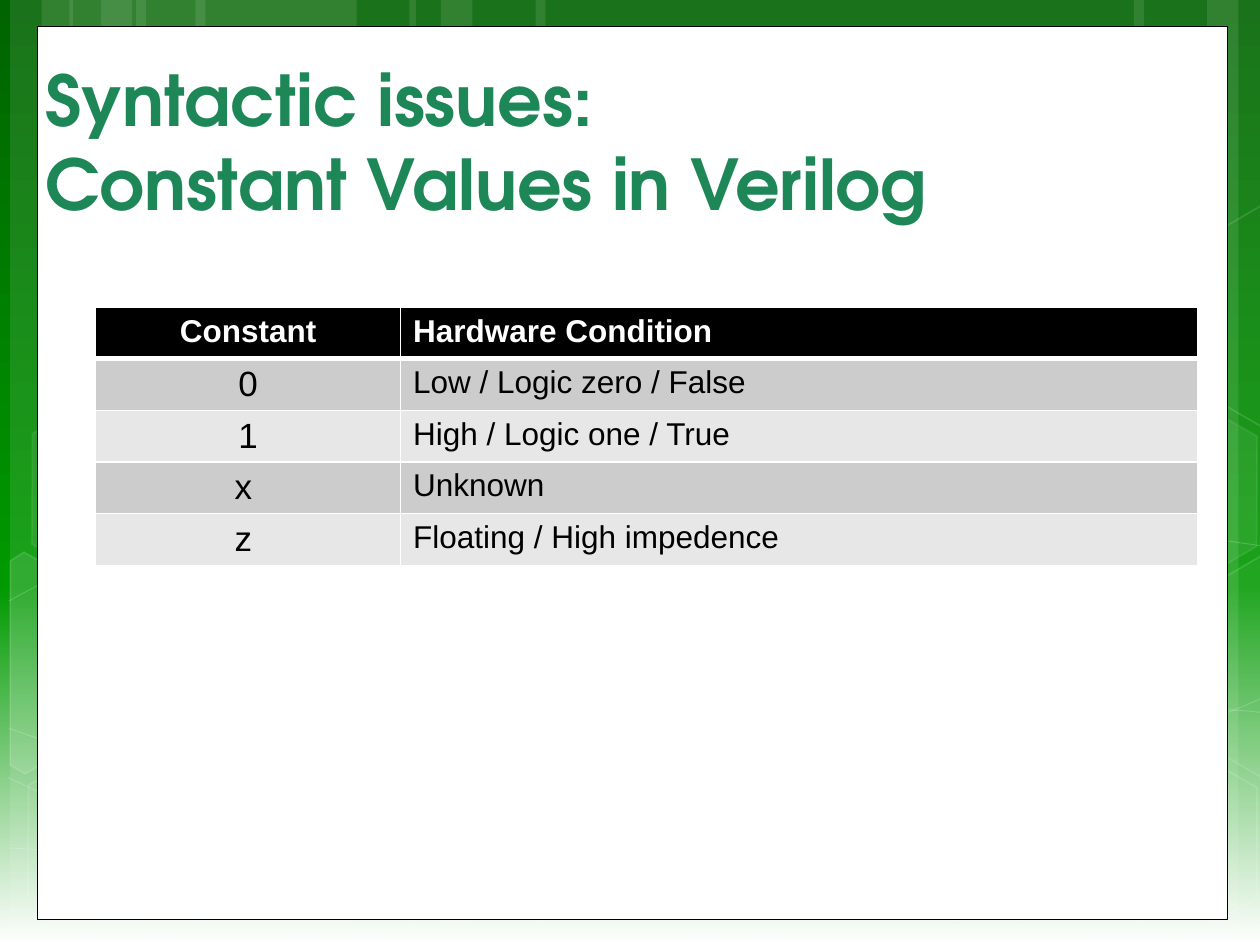
from copy import deepcopy
from math import cos, radians, sin

from lxml.etree import SubElement
from pptx import Presentation
from pptx.dml.color import RGBColor
from pptx.enum.shapes import MSO_SHAPE as SHAPE
from pptx.enum.text import MSO_ANCHOR as ANCHOR, MSO_AUTO_SIZE as AUTO, PP_ALIGN as ALIGN
from pptx.oxml.ns import qn
from pptx.util import Inches, Pt

WHITE = RGBColor(0xFF, 0xFF, 0xFF)
BLACK = RGBColor(0, 0, 0)
DARK_GREEN = RGBColor(0, 0x64, 0)
GREEN = RGBColor(0, 0x99, 0)
TITLE_GREEN = RGBColor(0x1D, 0x87, 0x57)
GRAY = RGBColor(0xCC, 0xCC, 0xCC)
LIGHT_GRAY = RGBColor(0xE7, 0xE7, 0xE7)

TILT = 30  # degrees, for every hexagon

# Left edge and width of each full-height band
BANDS = [(1.08, 1.75), (0.08, 0.5), (0.33, 0.83), (1.55, 1.75), (0.55, 0.5), (0.8, 0.83),
         (7.33, 1.75), (9.58, 0.5), (9, 0.83), (4.25, 3.08), (3.25, 0.5), (3.5, 0.83)]

# Start point, then groups of three points, one group for each Bezier segment
CURVES = [
    [(0.07, 6.73), (0.61, 6.76), (1.15, 6.79), (1.9, 6.78), (2.65, 6.77), (3.58, 6.75),
     (4.58, 6.65), (5.58, 6.55), (7, 6.36), (7.92, 6.17), (8.83, 5.98), (9.77, 5.68),
     (10.07, 5.51)],
    [(0.07, 4.77), (0.36, 4.61), (0.65, 4.46), (1.21, 4.31), (1.78, 4.16), (2.59, 3.94),
     (3.47, 3.87), (4.36, 3.8), (5.44, 3.79), (6.54, 3.87), (7.64, 3.95), (9.47, 4.26),
     (10.07, 4.34)],
    [(0.06, 6.17), (1.27, 6.72), (2.47, 7.27), (3.34, 7.49)],
    [(0.07, 5.78), (0.38, 5.89), (0.7, 6), (1.28, 6.16), (1.86, 6.31), (2.73, 6.56),
     (3.57, 6.73), (4.4, 6.9), (5.45, 7.08), (6.28, 7.18), (7.11, 7.29), (8, 7.33),
     (8.53, 7.36), (9.05, 7.4), (9.19, 7.38), (9.45, 7.38), (9.71, 7.37), (9.89, 7.35),
     (10.07, 7.34)],
    [(2.42, 7.49), (2.6, 7.29), (2.78, 7.09), (3.02, 6.91), (3.26, 6.73), (3.6, 6.53),
     (3.88, 6.39), (4.16, 6.25), (4.33, 6.19), (4.7, 6.09), (5.06, 5.99), (5.73, 5.85),
     (6.08, 5.78), (6.44, 5.71), (6.49, 5.71), (6.8, 5.69), (7.11, 5.66), (7.6, 5.63),
     (7.94, 5.62), (8.29, 5.61), (8.86, 5.62), (8.86, 5.62), (9.08, 5.62), (9.31, 5.62),
     (9.53, 5.62), (9.71, 5.63), (9.88, 5.64), (9.97, 5.65), (10.06, 5.66), (10.03, 5.65),
     (10.06, 5.66)],
]

# Left, top, fill opacity and line opacity in percent
HEXAGONS = [(4.97, 5.89, 6, 12), (0.11, 5.91, 0, 12), (0.14, 3.12, 7, 8),
            (1.74, 5.92, 0, 12), (8.34, 5.93, 0, 12), (8.34, 3.14, 7, 8)]

# Hexagons cut off by the slide edge: centre, corners as they stand tilted, fill opacity
CUT_HEXAGONS = [
    ((0.36, 5.35), [(0.08, 4.45), (0.19, 4.38), (0.96, 4.82), (0.95, 5.7), (0.2, 6.14),
                    (0.08, 6.07)], 10),
    ((9.85, 5.2), [(9.26, 4.85), (10.01, 4.41), (10.09, 4.46), (10.09, 6.13), (10.02, 6.17),
                   (9.26, 5.73)], 4),
    ((9.85, 2.41), [(9.26, 2.07), (10.01, 1.63), (10.1, 1.68), (10.09, 3.35), (10.02, 3.39),
                    (9.26, 2.95)], 0),
]

ROWS = [("Constant", "Hardware Condition"), ("0", "Low / Logic zero / False"),
        ("1", "High / Logic one / True"), ("x ", "Unknown"),
        ("z ", "Floating / High impedence")]


def untilt(point, centre):
    """Turn a point back by TILT, so that the shape's rotation restores it."""
    dx, dy = point[0] - centre[0], point[1] - centre[1]
    c, s = cos(radians(TILT)), sin(radians(TILT))
    return centre[0] + dx * c + dy * s, centre[1] - dx * s + dy * c


class SlideBuilder:
    title_font = dict(name="TeX Gyre Adventor", size=Pt(40), bold=True)
    table_font = "Arial"

    def __init__(self, prs):
        self.s = prs.slides.add_slide(prs.slide_layouts[5])
        self.shapes = self.s.shapes

    def set_font(self, font, color, **values):
        for name, value in values.items():
            setattr(font, name, value)
        font.color.rgb = color

    def paint(self, sp, fill=0, line=0, width=1):
        """Give white fill and line with opacity in percent; zero means none."""
        sp.shadow.inherit = False
        for part, alpha in ((sp.fill, fill), (sp.line.fill, line)):
            if not alpha:
                part.background()
                continue
            part.solid()
            part.fore_color.rgb = WHITE
        sp.line.width = Pt(width)
        sp_pr = sp._element.spPr
        for xpath, alpha in (("a:solidFill", fill), ("a:ln/a:solidFill", line)):
            for solid in sp_pr.xpath(xpath):
                SubElement(solid[0], qn("a:alpha"), val=str(alpha * 1000))

    def background(self):
        fill = self.s.background.fill
        fill.gradient()
        fill.gradient_angle = 270
        gs_list = self.s._element.find(".//" + qn("a:gsLst"))
        gs_list.append(deepcopy(gs_list[-1]))
        stops = [(0, DARK_GREEN), (0.62, GREEN), (1, WHITE)]
        for stop, (position, color) in zip(fill.gradient_stops, stops):
            stop.position = position
            stop.color.rgb = color

    def shape(self, kind, left, top, width, height):
        return self.shapes.add_shape(kind, *map(Inches, (left, top, width, height)))

    def freeform(self, points, close):
        start, *rest = [(Inches(x), Inches(y)) for x, y in points]
        builder = self.shapes.build_freeform(*start)
        builder.add_line_segments(rest, close=close)
        return builder.convert_to_shape()

    def curve(self, points):
        sp = self.freeform(points, close=False)
        path_el = sp._element.find(".//" + qn("a:path"))
        lines = path_el.findall(qn("a:lnTo"))
        for i in range(0, len(lines), 3):
            bezier = SubElement(path_el, qn("a:cubicBezTo"))
            for line in lines[i:i + 3]:
                bezier.append(line[0])
                path_el.remove(line)
        self.paint(sp, line=20, width=0.5)

    def hexagon(self, left, top, fill, line):
        sp = self.shape(SHAPE.HEXAGON, left, top, 1.75, 1.52)
        sp.adjustments[0] = 0.285
        sp.rotation = TILT
        self.paint(sp, fill, line)

    def cut_hexagon(self, centre, corners, fill):
        sp = self.freeform([untilt(corner, centre) for corner in corners], close=True)
        sp.rotation = TILT
        self.paint(sp, fill, line=12)

    def panel(self):
        sp = self.shape(SHAPE.RECTANGLE, 0.3, 0.21, 9.44, 7.09)
        self.paint(sp, fill=100, line=100, width=0.5)
        sp.line.color.rgb = BLACK

    def title(self, text):
        sp = self.shapes.title
        sp.left, sp.top, sp.width, sp.height = map(Inches, (0.26, 0.26, 9.46, 1.57))
        tf = sp.text_frame
        tf.text = text
        tf.auto_size = AUTO.NONE
        tf.vertical_anchor = ANCHOR.BOTTOM
        p = tf.paragraphs[0]
        p.alignment = ALIGN.LEFT
        for r in p.runs:
            self.set_font(r.font, TITLE_GREEN, **self.title_font)
        self.shapes._spTree.append(sp._element)  # in front of the panel

    def borders(self, cell, bottom):
        tc_pr = cell._tc.get_or_add_tcPr()
        for i, (tag, width) in enumerate(zip(("lnL", "lnR", "lnT", "lnB"), (1, 1, 1, bottom))):
            ln = tc_pr.makeelement(qn("a:" + tag), {"w": str(Pt(width))})
            SubElement(SubElement(ln, qn("a:solidFill")), qn("a:srgbClr"), val=str(WHITE))
            tc_pr.insert(i, ln)

    def table(self, rows, left, top, widths, height):
        frame = self.shapes.add_table(len(rows), len(widths), *map(
            Inches, (left, top, sum(widths), height)))
        table = frame.table
        for column, width in zip(table.columns, widths):
            column.width = Inches(width)
        for i, texts in enumerate(rows):
            header = i == 0
            for j, text in enumerate(texts):
                cell = table.cell(i, j)
                cell.fill.solid()
                cell.fill.fore_color.rgb = BLACK if header else (LIGHT_GRAY, GRAY)[i % 2]
                self.borders(cell, bottom=3 if header else 1)
                cell.text = text
                p = cell.text_frame.paragraphs[0]
                p.alignment = ALIGN.LEFT if j else ALIGN.CENTER
                self.set_font(p.runs[0].font, WHITE if header else BLACK, bold=header,
                              name=self.table_font, size=Pt(18 if header or j else 20))


def main():
    prs = Presentation()
    prs.slide_width, prs.slide_height = Inches(10), Inches(7.5)
    slide = SlideBuilder(prs)
    slide.background()
    for left, width in BANDS:
        slide.paint(slide.shape(SHAPE.RECTANGLE, left, 0, width, 7.5), fill=10)
    for points in CURVES:
        slide.curve(points)
    for hexagon in HEXAGONS:
        slide.hexagon(*hexagon)
    for cut_hexagon in CUT_HEXAGONS:
        slide.cut_hexagon(*cut_hexagon)
    slide.panel()
    slide.title("Syntactic issues:\vConstant Values in Verilog")
    slide.table(ROWS, 0.76, 2.44, (2.42, 6.33), 2.03)
    prs.save("out.pptx")


if __name__ == "__main__":
    main()
